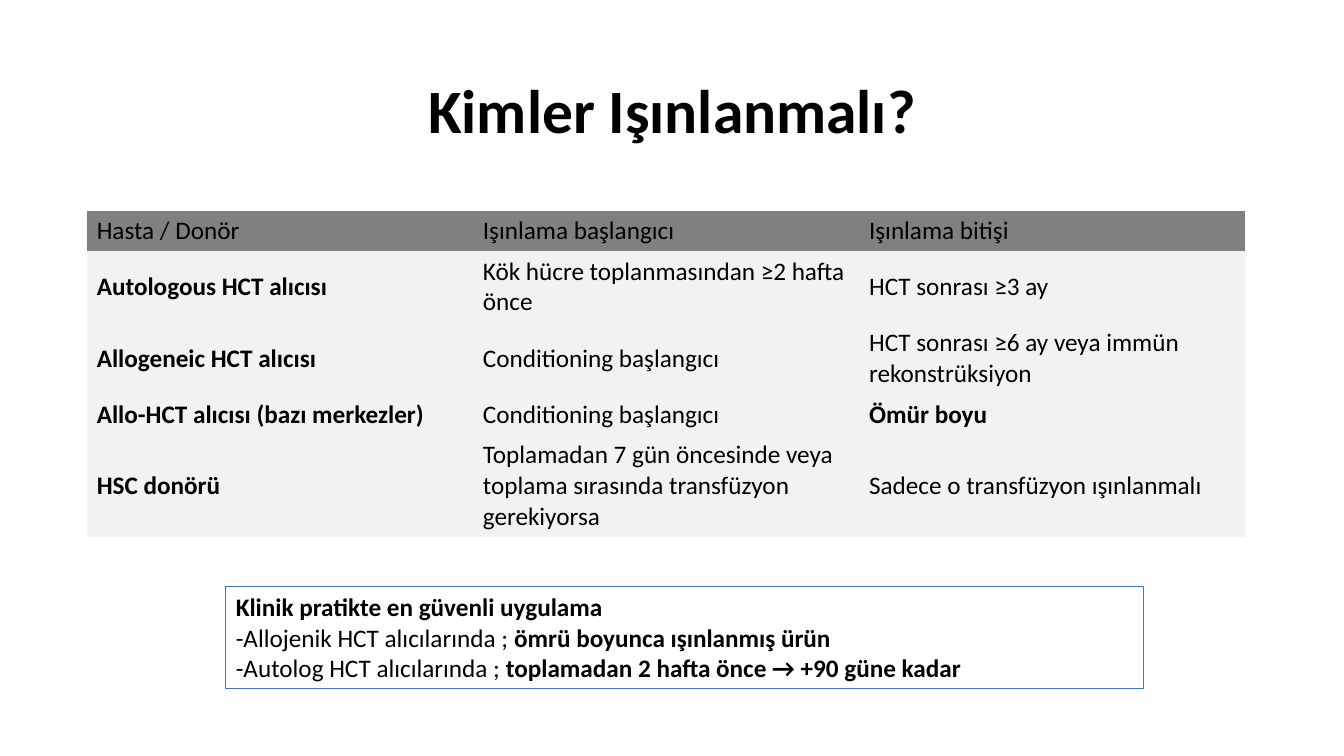
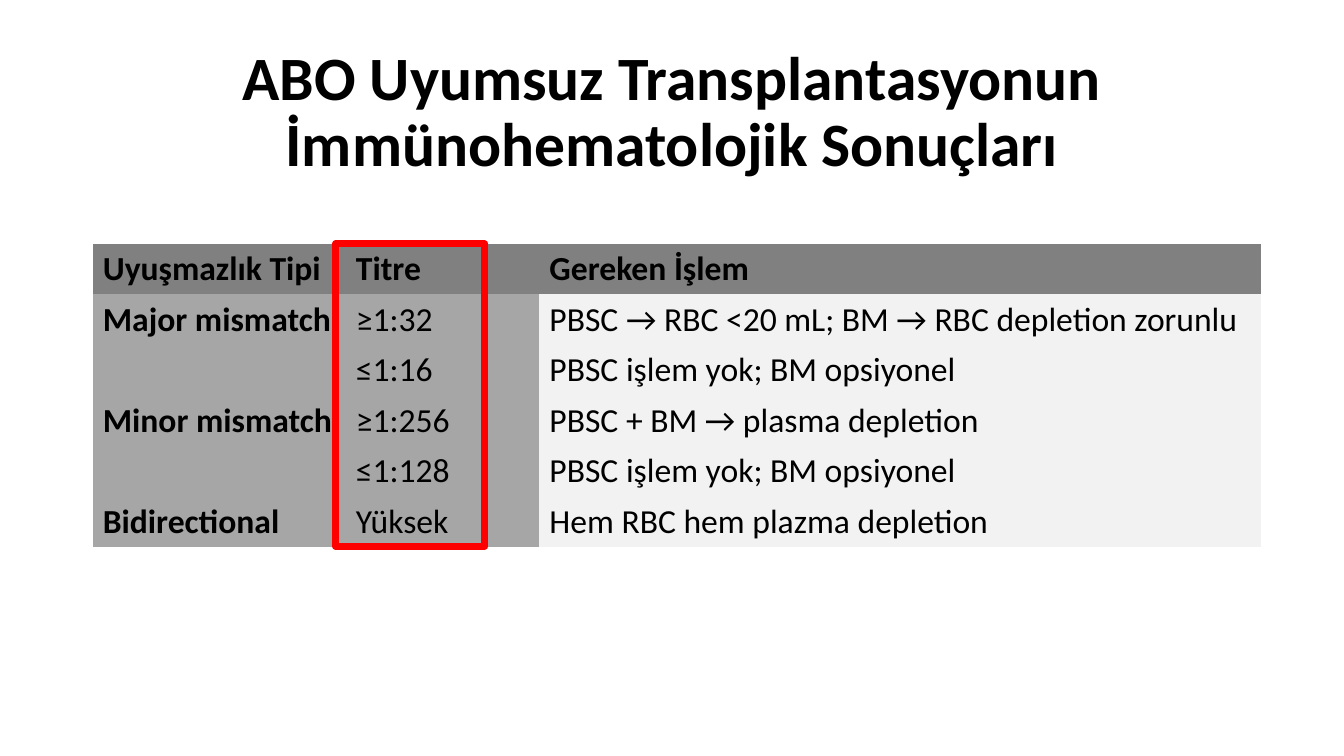
import pptx
import pptx.dml.color
import pptx.enum.shapes
import pptx.enum.text
import pptx.oxml.ns
import pptx.util

PX = 9144  # EMU per px, 100 px to the inch
FONT = "Calibri"
COLORS = {
    "text": "000000",
    "header": "808080",
    "label": "A6A6A6",
    "body": "F2F2F2",
    "note_line": "4472C4",
    "highlight": "FF0000",
}
NO_STYLE_NO_GRID = "{2D5ABB26-0587-4C30-8999-92F81FD0307C}"
TITLE_BOX = (92, 40, 1150, 145)
MIDDLE = pptx.enum.text.MSO_ANCHOR.MIDDLE
TOP = pptx.enum.text.MSO_ANCHOR.TOP
LEFT = pptx.enum.text.PP_ALIGN.LEFT
CENTER = pptx.enum.text.PP_ALIGN.CENTER


def emu(*lengths):
    return [pptx.util.Emu(length * PX) for length in lengths]


def rgb(name):
    return pptx.dml.color.RGBColor.from_string(COLORS[name])


def write(frame, text, size=18, bold=False, align=LEFT, spacing=None, color="text"):
    """Write a string, or a list of paragraphs made of (text, bold) runs."""
    paragraphs = [[(text, bold)]] if isinstance(text, str) else text
    frame.word_wrap = True
    for index, runs in enumerate(paragraphs):
        paragraph = frame.add_paragraph() if index else frame.paragraphs[0]
        paragraph.alignment = align
        if spacing:
            paragraph.line_spacing = spacing
        paragraph.font.size = pptx.util.Pt(size)
        for words, is_bold in runs:
            run = paragraph.add_run()
            run.text = words
            run.font.name = FONT
            run.font.size = pptx.util.Pt(size)
            run.font.bold = is_bold
            run.font.color.rgb = rgb(color)


def add_title(slide, box, title):
    frame = slide.shapes.add_textbox(*emu(*box)).text_frame
    frame.vertical_anchor = MIDDLE
    write(frame, title, size=44, bold=True, align=CENTER, spacing=0.9)


def add_grid(slide, origin, widths, heights, rows, size, header_bold, label_columns=0,
             bold_cells=()):
    """Table with a grey header and a bold first column."""
    box = (*origin, sum(widths), sum(heights))
    graphic = slide.shapes.add_table(len(rows), len(widths), *emu(*box))
    for style_id in graphic.element.iter(pptx.oxml.ns.qn("a:tableStyleId")):
        style_id.text = NO_STYLE_NO_GRID
    grid = graphic.table
    grid.horz_banding = False
    grid.first_row = False
    for column, width in zip(grid.columns, emu(*widths)):
        column.width = width
    for row, height in zip(grid.rows, emu(*heights)):
        row.height = height
    for r, row in enumerate(rows):
        for c, words in enumerate(row):
            cell = grid.cell(r, c)
            cell.vertical_anchor = MIDDLE
            fill = "header" if r == 0 else "label" if c < label_columns else "body"
            cell.fill.solid()
            cell.fill.fore_color.rgb = rgb(fill)
            bold = header_bold if r == 0 else c == 0 or (r, c) in bold_cells
            if words:
                write(cell.text_frame, words, size=size, bold=bold)


def add_frame(slide, box, line, width):
    """Unfilled outlined rectangle."""
    outline = slide.shapes.add_shape(pptx.enum.shapes.MSO_SHAPE.RECTANGLE, *emu(*box))
    outline.shadow.inherit = False
    outline.fill.background()
    outline.line.color.rgb = rgb(line)
    outline.line.width = pptx.util.Pt(width)
    return outline


def irradiation_slide(slide):
    add_title(slide, TITLE_BOX, "Kimler Işınlanmalı?")
    # Patients and irradiation periods
    add_grid(
        slide, (86, 209), [383] * 3, [40, 71, 71, 40, 102],
        [
            ("Hasta / Donör", "Işınlama başlangıcı", "Işınlama bitişi"),
            ("Autologous HCT alıcısı", "Kök hücre toplanmasından ≥2 hafta önce",
             "HCT sonrası ≥3 ay"),
            ("Allogeneic HCT alıcısı", "Conditioning başlangıcı",
             "HCT sonrası ≥6 ay veya immün rekonstrüksiyon"),
            ("Allo-HCT alıcısı (bazı merkezler)", "Conditioning başlangıcı", "Ömür boyu"),
            ("HSC donörü",
             "Toplamadan 7 gün öncesinde veya toplama sırasında transfüzyon gerekiyorsa",
             "Sadece o transfüzyon ışınlanmalı"),
        ],
        size=18, header_bold=False, bold_cells={(3, 2)},
    )
    # Clinical practice note
    note = add_frame(slide, (224, 582, 910, 101), "note_line", 0.75).text_frame
    note.vertical_anchor = TOP
    write(note, [
        [("Klinik pratikte en güvenli uygulama", True)],
        [("-Allojenik HCT alıcılarında ; ", False), ("ömrü boyunca ışınlanmış ürün", True)],
        [("-Autolog HCT alıcılarında ; ", False),
         ("toplamadan 2 hafta önce → +90 güne kadar", True)],
    ])


def mismatch_slide(slide):
    add_title(slide, TITLE_BOX, "ABO Uyumsuz Transplantasyonun İmmünohematolojik Sonuçları")
    # Mismatch types, titres and procedures
    left, top = 92, 242
    row_heights = [50] * 6
    add_grid(
        slide, (left, top), [251, 192, 716], row_heights,
        [
            ("Uyuşmazlık Tipi", "Titre", "Gereken İşlem"),
            ("Major mismatch", "≥1:32", "PBSC → RBC <20 mL; BM → RBC depletion zorunlu"),
            ("", "≤1:16", "PBSC işlem yok; BM opsiyonel"),
            ("Minor mismatch", "≥1:256", "PBSC + BM → plasma depletion"),
            ("", "≤1:128", "PBSC işlem yok; BM opsiyonel"),
            ("Bidirectional", "Yüksek", "Hem RBC hem plazma depletion"),
        ],
        size=24, header_bold=True, label_columns=2,
    )
    # Highlight around the titre column
    add_frame(slide, (left + 241, top, 148, sum(row_heights)), "highlight", 5)


def main():
    deck = pptx.Presentation()
    deck.slide_width, deck.slide_height = emu(1333, 750)
    blank = deck.slide_layouts[6]
    for build in (irradiation_slide, mismatch_slide):
        build(deck.slides.add_slide(blank))
    deck.save("out.pptx")


if __name__ == "__main__":
    main()
